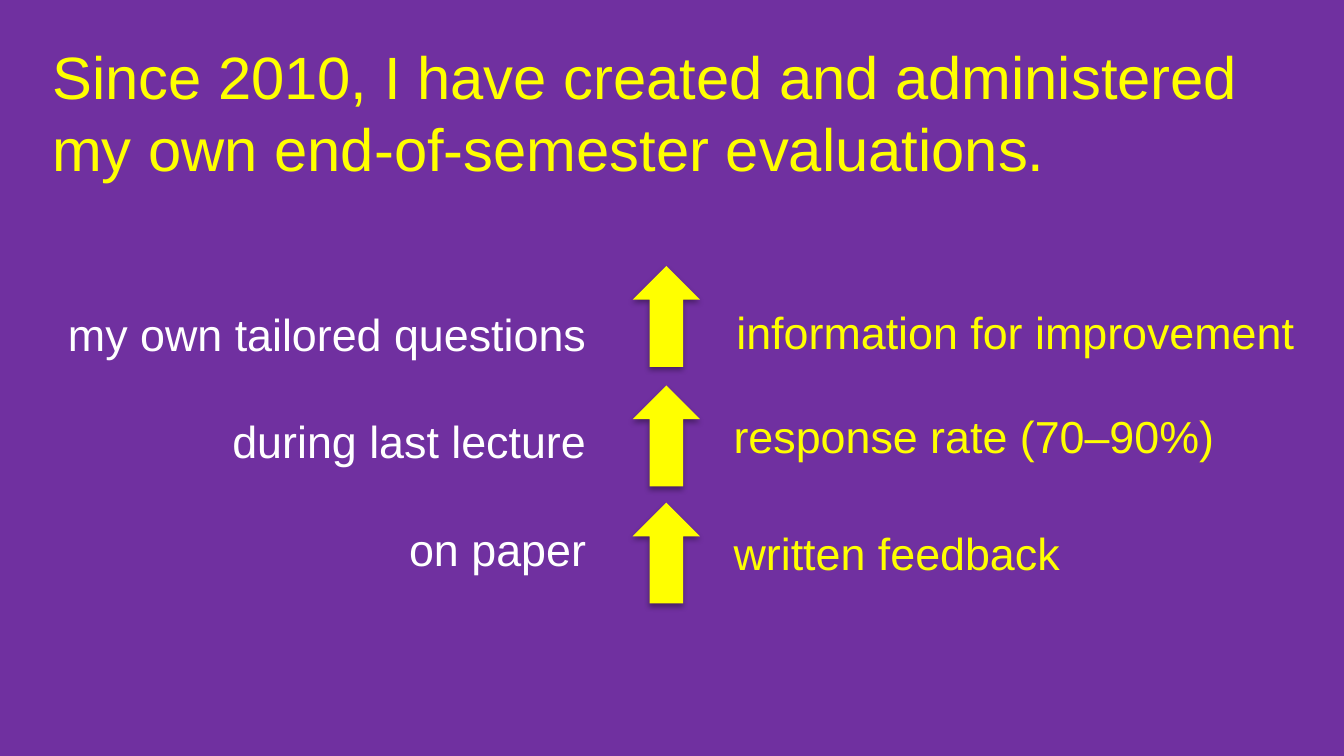
from dataclasses import dataclass

from lxml.etree import SubElement
from pptx import Presentation
from pptx.dml.color import RGBColor
from pptx.enum.shapes import MSO_SHAPE
from pptx.enum.text import PP_ALIGN
from pptx.oxml.ns import qn
from pptx.util import Pt


@dataclass(frozen=True)
class Theme:
    font: str = "Arial"
    background: str = "7030A0"
    accent: str = "FFFF00"
    light: str = "FFFFFF"
    shadow: str = "000000"
    title_size: float = 32
    body_size: float = 24
    line_height: float = 1.2


class SlideBuilder:
    def __init__(self, slide, theme):
        self.slide = slide
        self.theme = theme

    def background(self):
        fill = self.slide.background.fill
        fill.solid()
        fill.fore_color.rgb = RGBColor.from_string(self.theme.background)

    def text(self, box, lines, size, color, align=PP_ALIGN.LEFT, gap=0, wrap=True):
        shape = self.slide.shapes.add_textbox(*map(Pt, box))
        frame = shape.text_frame
        frame.word_wrap = wrap
        for index, line in enumerate(lines):
            paragraph = frame.add_paragraph() if index else frame.paragraphs[0]
            paragraph.alignment = align
            paragraph.line_spacing = Pt(size * self.theme.line_height)
            paragraph.space_after = Pt(gap)
            run = paragraph.add_run()
            run.text = line
            run.font.name = self.theme.font
            run.font.size = Pt(size)
            run.font.color.rgb = RGBColor.from_string(color)

    def up_arrow(self, box):
        shape = self.slide.shapes.add_shape(MSO_SHAPE.UP_ARROW, *map(Pt, box))
        shape.fill.solid()
        shape.fill.fore_color.rgb = RGBColor.from_string(self.theme.accent)
        shape.line.fill.background()
        # Soft shadow straight below the arrow
        shape.shadow.inherit = False
        effects = shape.element.spPr.find(qn("a:effectLst"))
        shadow = SubElement(effects, qn("a:outerShdw"), blurRad=str(Pt(3.1)),
                            dist=str(Pt(1.8)), dir="5400000", rotWithShape="0")
        color = SubElement(shadow, qn("a:srgbClr"), val=self.theme.shadow)
        SubElement(color, qn("a:alpha"), val="35000")


def main():
    theme = Theme()
    presentation = Presentation()
    presentation.slide_width = Pt(720)
    presentation.slide_height = Pt(405)
    slide = presentation.slides.add_slide(presentation.slide_layouts[6])
    builder = SlideBuilder(slide, theme)
    builder.background()

    # Title
    builder.text((20.9, 18, 666, 85),
                 ["Since 2010, I have created and administered "
                  "my own end-of-semester evaluations."],
                 theme.title_size, theme.accent)

    # Evaluation practices, one line of space apart
    builder.text((0, 160.5, 321, 181.5),
                 ["my own tailored questions", "during last lecture", "on paper"],
                 theme.body_size, theme.light, PP_ALIGN.RIGHT,
                 gap=theme.body_size * theme.line_height)

    # Benefits: arrow top, text left, text top, text width, wrap, wording
    benefits = [
        (142.5, 387.4, 159.8, 317.5, False, "information for improvement"),
        (206.5, 385.9, 215.3, 275, False, "response rate (70–90%)"),
        (269.3, 385.9, 277.9, 270, True, "written feedback"),
    ]
    for arrow_top, left, top, width, wrap, wording in benefits:
        builder.up_arrow((339, arrow_top, 36, 54))
        builder.text((left, top, width, 36), [wording],
                     theme.body_size, theme.accent, wrap=wrap)

    presentation.save("out.pptx")


if __name__ == "__main__":
    main()
